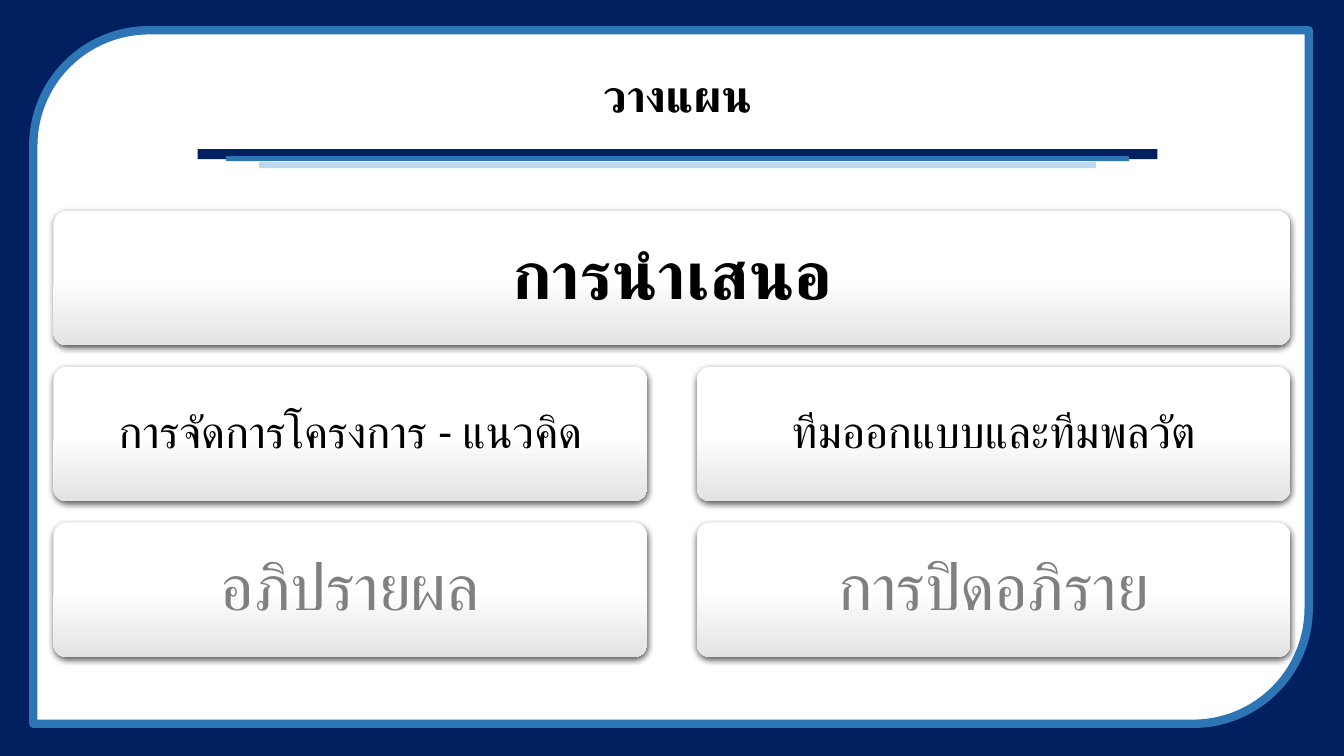
from lxml.etree import SubElement
from pptx import Presentation
from pptx.dml.color import RGBColor
from pptx.enum.shapes import MSO_SHAPE
from pptx.enum.text import MSO_ANCHOR, PP_ALIGN
from pptx.oxml.ns import qn
from pptx.util import Inches, Pt

WIDE, HIGH = 13.33, 7.5
NAVY, BLUE, PALE = "002060", "2E75B6", "BDD7EE"
WHITE, BLACK, GREY, SHADE = "FFFFFF", "000000", "808080", "E3E3E3"


def color(code):
    return RGBColor.from_string(code)


def write(shape, text, size, font="Calibri", tint=BLACK, bold=False, inset=0.1):
    """Put one centred paragraph in a shape."""
    frame = shape.text_frame
    frame.word_wrap = True
    frame.vertical_anchor = MSO_ANCHOR.MIDDLE
    frame.margin_left = frame.margin_right = Inches(inset)
    frame.margin_top = frame.margin_bottom = Inches(inset)
    para = frame.paragraphs[0]
    para.alignment = PP_ALIGN.CENTER
    para.line_spacing = 0.9
    run = para.add_run()
    run.text = text
    run.font.name = font
    run.font.size = Pt(size)
    run.font.bold = bold
    run.font.color.rgb = color(tint)


def block(slide, box, fill, kind=MSO_SHAPE.RECTANGLE):
    """Add a plain filled shape with neither line nor shadow."""
    shape = slide.shapes.add_shape(kind, *map(Inches, box))
    shape.fill.solid()
    shape.fill.fore_color.rgb = color(fill)
    shape.line.fill.background()
    shape.shadow.inherit = False
    return shape


def frame(slide, box):
    """Draw the navy backdrop and the white panel inside it."""
    left, top, width, height = box
    block(slide, box, NAVY)
    inner = left + 0.33, top + 0.3, width - 0.68, height - 0.62
    panel = block(slide, inner, WHITE, MSO_SHAPE.ROUND_2_DIAG_RECTANGLE)
    panel.rotation = 180
    panel.line.color.rgb = color(BLUE)
    panel.line.width = Pt(6)


def header(slide, box, text):
    """Place the title and the three narrowing bars below it."""
    left, top, width, height = box
    title = slide.shapes.add_textbox(*map(Inches, box))
    write(title, text, 32, font="Arial", bold=True)
    bars = [(0, 0.99, 0.1, NAVY), (0.28, 1.06, 0.05, BLUE), (0.61, 1.12, 0.06, PALE)]
    for inset, drop, thick, fill in bars:
        block(slide, (left + inset, top + drop, width - 2 * inset, thick), fill)


def card(slide, box, text, size, **style):
    """Add a rounded card with a soft gradient and shadow."""
    shape = block(slide, box, WHITE, MSO_SHAPE.ROUNDED_RECTANGLE)
    shape.adjustments[0] = 0.1
    shape.fill.gradient()
    shape.fill.gradient_angle = 270
    for stop, place, code in zip(shape.fill.gradient_stops, (0.5, 1), (WHITE, SHADE)):
        stop.position = place
        stop.color.rgb = color(code)
    effects = shape.element.spPr.find(qn("a:effectLst"))
    shadow = SubElement(effects, qn("a:outerShdw"), blurRad=str(Pt(4.5)),
                        dist=str(Pt(1.5)), dir="5400000", rotWithShape="0")
    shade = SubElement(shadow, qn("a:srgbClr"), val=BLACK)
    SubElement(shade, qn("a:alpha"), val="63000")
    write(shape, text, size, **style)


def agenda(slide, box, rows):
    """Stack rows of cards, each row sharing the full width."""
    left, top, width, height = box
    gap, gutter = 0.21, 0.49
    tall = (height - gap * (len(rows) - 1)) / len(rows)
    for row, (texts, size, style) in enumerate(rows):
        wide = (width - gutter * (len(texts) - 1)) / len(texts)
        for col, text in enumerate(texts):
            spot = left + col * (wide + gutter), top + row * (tall + gap), wide, tall
            card(slide, spot, text, size, **style)


def main():
    deck = Presentation()
    deck.slide_width, deck.slide_height = Inches(WIDE), Inches(HIGH)
    slide = deck.slides.add_slide(deck.slide_layouts[6])
    frame(slide, (0, 0, WIDE, HIGH))
    header(slide, (1.96, 0.49, 9.52, 0.97), "วางแผน")
    agenda(slide, (0.53, 2.09, 12.27, 4.43), [
        (["การนำเสนอ"], 48, {"bold": True, "inset": 0.2}),
        (["การจัดการโครงการ - แนวคิด", "ทีมออกแบบและทีมพลวัต"], 32, {"inset": 0.13}),
        (["อภิปรายผล", "การปิดอภิราย"], 46, {"tint": GREY, "inset": 0.19}),
    ])
    deck.save("out.pptx")


if __name__ == "__main__":
    main()
